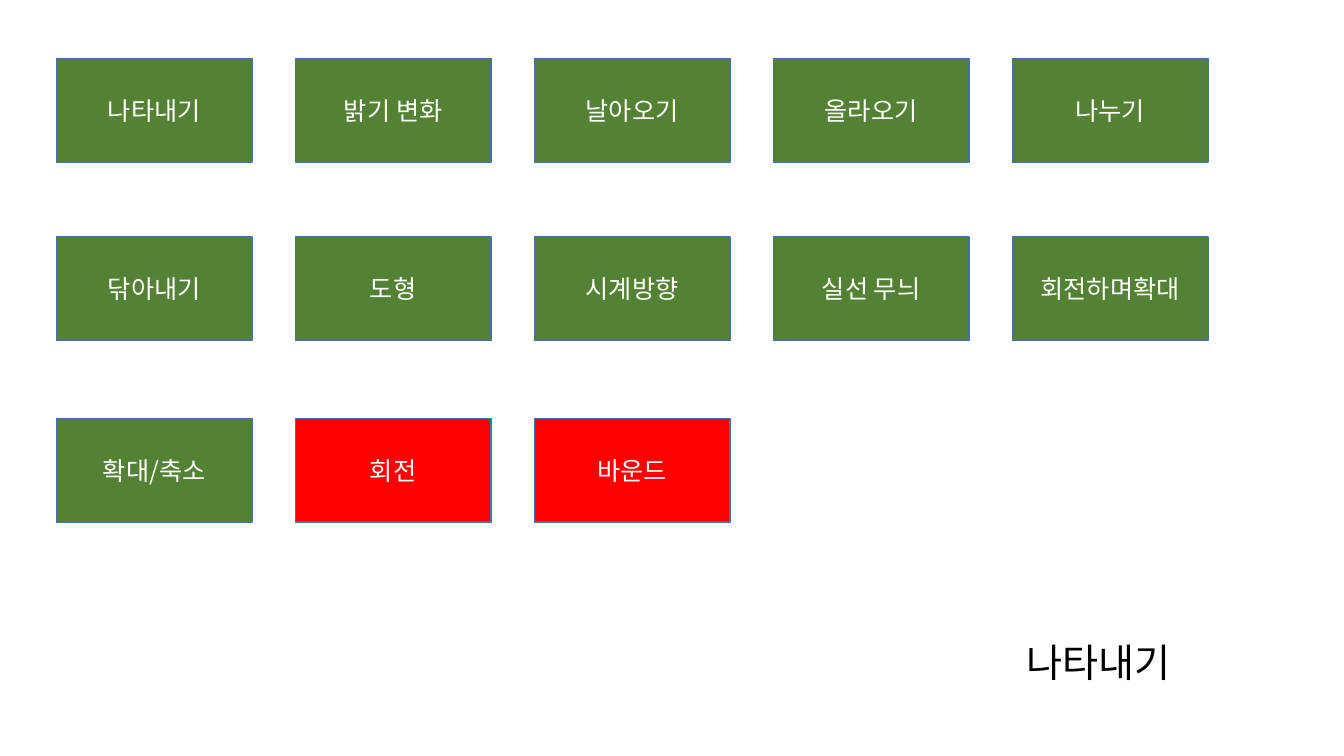
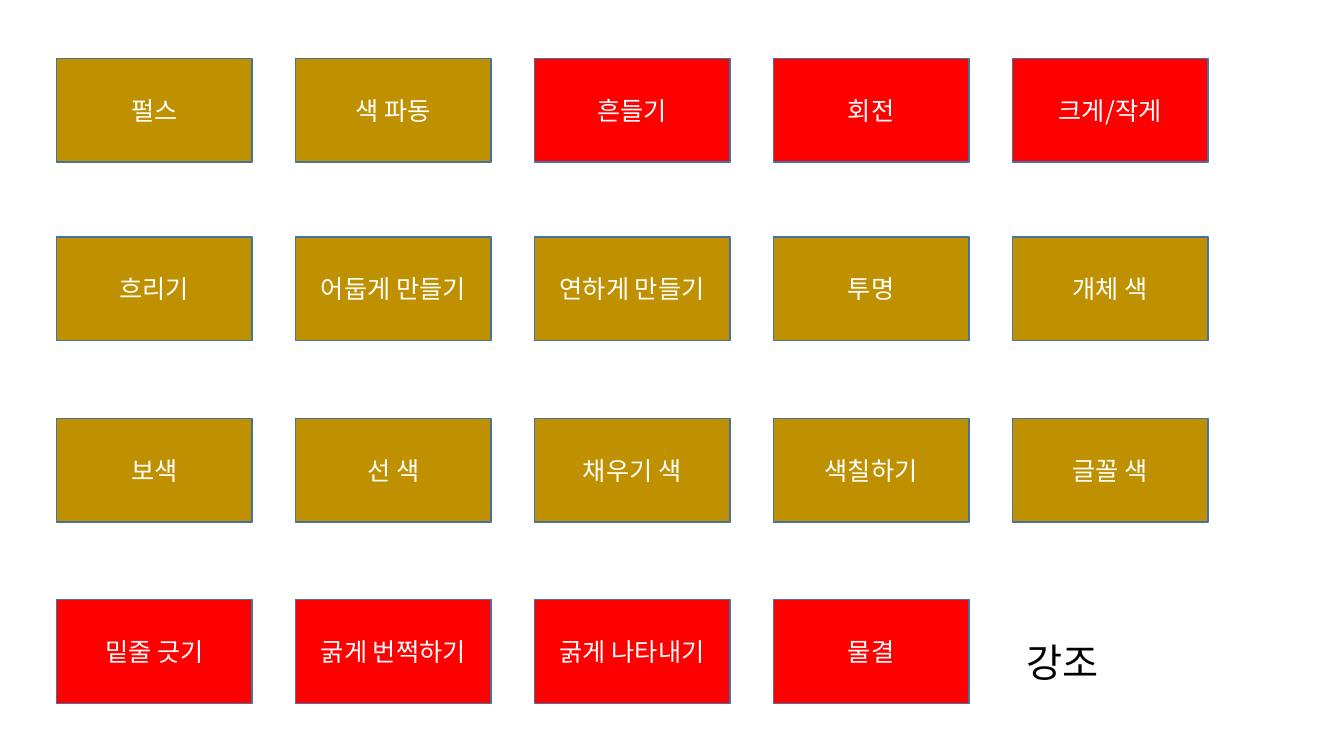
from dataclasses import dataclass

from lxml.etree import SubElement
from pptx import Presentation
from pptx.dml.color import RGBColor
from pptx.enum.shapes import MSO_SHAPE
from pptx.enum.text import MSO_ANCHOR, MSO_AUTO_SIZE, PP_ALIGN
from pptx.oxml.ns import qn
from pptx.util import Inches, Pt


@dataclass(frozen=True)
class Theme:
    font: str = "Noto Sans CJK KR"
    button_size: int = 18
    title_size: int = 28
    green: str = "548235"
    gold: str = "BF9000"
    red: str = "FF0000"
    outline: str = "43739E"
    white: str = "FFFFFF"
    black: str = "000000"


theme = Theme()


def write_text(shape, text, size, color, alignment):
    shape.text_frame.text = text
    para = shape.text_frame.paragraphs[0]
    para.alignment = alignment
    para.font.size = Pt(size)
    para.font.color.rgb = RGBColor.from_string(color)
    para.font.name = theme.font
    east_asian = SubElement(para._p.pPr.find(qn("a:defRPr")), qn("a:ea"))
    east_asian.set("typeface", theme.font)


def add_button(page, text, left, top, color):
    button = page.shapes.add_shape(
        MSO_SHAPE.RECTANGLE, Inches(left), Inches(top), Inches(1.94), Inches(1.03)
    )
    button.shadow.inherit = False
    button.fill.solid()
    button.fill.fore_color.rgb = RGBColor.from_string(color)
    button.line.color.rgb = RGBColor.from_string(theme.outline)
    button.line.width = Pt(1)
    button.text_frame.vertical_anchor = MSO_ANCHOR.MIDDLE
    write_text(button, text, theme.button_size, theme.white, PP_ALIGN.CENTER)


first_left = 0.56
column_step = 2.37
row_tops = [0.58, 2.35, 4.15, 5.95]

pages = [
    {
        "title": "나타내기",
        "color": theme.green,
        "rows": [
            ["나타내기", "밝기 변화", "날아오기", "올라오기", "나누기"],
            ["닦아내기", "도형", "시계방향", "실선 무늬", "회전하며확대"],
            ["확대/축소", "회전", "바운드"],
        ],
        "red": {"회전", "바운드"},
    },
    {
        "title": "강조",
        "color": theme.gold,
        "rows": [
            ["펄스", "색 파동", "흔들기", "회전", "크게/작게"],
            ["흐리기", "어둡게 만들기", "연하게 만들기", "투명", "개체 색"],
            ["보색", "선 색", "채우기 색", "색칠하기", "글꼴 색"],
            ["밑줄 긋기", "굵게 번쩍하기", "굵게 나타내기", "물결"],
        ],
        "red": {
            "흔들기", "회전", "크게/작게",
            "밑줄 긋기", "굵게 번쩍하기", "굵게 나타내기", "물결",
        },
    },
]

deck = Presentation()
deck.slide_width = Inches(13.33)
deck.slide_height = Inches(7.5)
title_only = deck.slide_layouts.get_by_name("Title Only")

for content in pages:
    page = deck.slides.add_slide(title_only)

    title = page.shapes.title
    title.left, title.top = Inches(10.08), Inches(6.28)
    title.width, title.height = Inches(1.89), Inches(0.57)
    title.text_frame.word_wrap = True
    title.text_frame.auto_size = MSO_AUTO_SIZE.SHAPE_TO_FIT_TEXT
    title.text_frame.vertical_anchor = MSO_ANCHOR.TOP
    write_text(title, content["title"], theme.title_size, theme.black, PP_ALIGN.LEFT)

    for top, labels in zip(row_tops, content["rows"]):
        for column, label in enumerate(labels):
            color = theme.red if label in content["red"] else content["color"]
            add_button(page, label, first_left + column * column_step, top, color)

deck.save("out.pptx")
